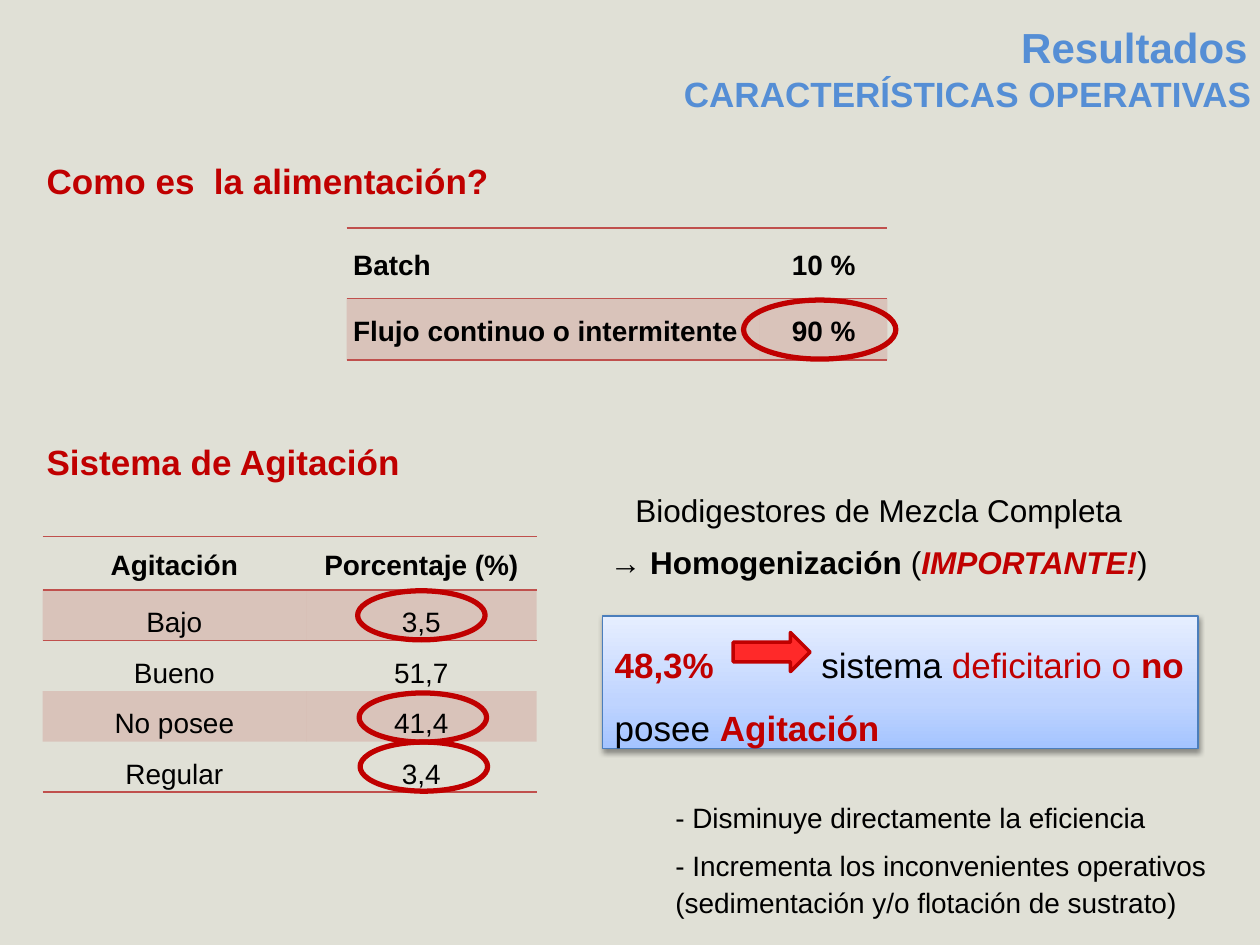
from copy import deepcopy

from lxml import etree
from pptx import Presentation
from pptx import util as u
from pptx.dml.color import RGBColor
from pptx.enum import shapes, text
from pptx.oxml import ns

Cm, Pt = u.Cm, u.Pt
COLORS = {"paper": "E0E0D6", "blue": "558ED5", "red": "C00000", "black": "000000",
          "rule": "C0504D", "arrow": "FF2929", "box_line": "4B7EBC",
          "box_low": "A4C4FF", "box_mid": "BFD4FF", "box_high": "E6EEFF"}
RGB = {name: RGBColor.from_string(value) for name, value in COLORS.items()}
LEFT, CENTER, RIGHT = text.PP_ALIGN.LEFT, text.PP_ALIGN.CENTER, text.PP_ALIGN.RIGHT
TOP, MIDDLE = text.MSO_ANCHOR.TOP, text.MSO_ANCHOR.MIDDLE


def write(frame, paragraphs, size, align=LEFT, spacing=1.0, after=0, anchor=TOP, inset=None):
    """Fill a text frame; each run is (text, colour, bold, italic)."""
    frame.word_wrap = True
    frame.auto_size = text.MSO_AUTO_SIZE.NONE
    frame.vertical_anchor = anchor
    if inset is not None:
        frame.margin_left = frame.margin_right = Cm(inset)
        frame.margin_top = frame.margin_bottom = 0
    for i, runs in enumerate(paragraphs):
        paragraph = frame.add_paragraph() if i else frame.paragraphs[0]
        paragraph.alignment = align
        paragraph.line_spacing = spacing
        paragraph.space_before, paragraph.space_after = Pt(0), Pt(after)
        for words, color, bold, italic in runs:
            run = paragraph.add_run()
            run.text = words
            run.font.name, run.font.size = "Arial", Pt(size)
            run.font.bold, run.font.italic = bold, italic
            run.font.color.rgb = RGB[color]


def add_child(parent, tag, **attributes):
    return etree.SubElement(parent, ns.qn(tag), **attributes)


prs = Presentation()
prs.slide_width, prs.slide_height = Cm(25.4), Cm(19.05)
slide = prs.slides.add_slide(prs.slide_layouts[1])
slide.background.fill.solid()
slide.background.fill.fore_color.rgb = RGB["paper"]

# Title and subtitle
title, effects = slide.placeholders
title.left, title.top, title.width, title.height = Cm(19.91), Cm(0.43), Cm(5.24), Cm(1.02)
write(title.text_frame, [[("Resultados", "blue", True, False)]], 24, RIGHT,
      anchor=MIDDLE, inset=0)
subtitle = slide.shapes.add_textbox(Cm(6.05), Cm(1.45), Cm(19.18), Cm(0.86))
write(subtitle.text_frame, [[("CARACTERÍSTICAS OPERATIVAS", "blue", True, False)]], 20, RIGHT,
      anchor=MIDDLE, inset=0)

# Section headings
for words, top in [("Como es  la alimentación?", 3.1), ("Sistema de Agitación", 8.76)]:
    heading = slide.shapes.add_textbox(Cm(0.69), Cm(top), Cm(10), Cm(1.12))
    write(heading.text_frame, [[(words, "red", True, False)]], 20)

# Tables: feeding and agitation; rules lists the (row, side) pairs that carry a line
feeding = dict(
    at=(6.99, 4.6), cols=(8.33, 2.57), rows=(1.42, 1.24), aligns=(LEFT, CENTER),
    data=[("Batch", "10 %"), ("Flujo continuo o intermitente", "90 %")],
    bold_rows=(0, 1), spacing=(1.15, 1.15), shaded=(1,),
    rules=[(0, "T"), (0, "B"), (1, "T"), (1, "B")])
agitation = dict(
    at=(0.86, 10.82), cols=(5.31, 4.65), rows=(1.07,) + (1.02,) * 4, aligns=(CENTER, CENTER),
    data=[("Agitación", "Porcentaje (%)"), ("Bajo", "3,5"), ("Bueno", "51,7"),
          ("No posee", "41,4"), ("Regular", "3,4")],
    bold_rows=(0,), spacing=(1.15,) + (1.5,) * 4, shaded=(1, 3),
    rules=[(0, "T"), (0, "B"), (1, "T"), (4, "B")])
for spec_of in (feeding, agitation):
    x, y = spec_of["at"]
    cols, rows = spec_of["cols"], spec_of["rows"]
    table = slide.shapes.add_table(len(rows), len(cols), Cm(x), Cm(y),
                                   Cm(sum(cols)), Cm(sum(rows))).table
    table.first_row = table.horz_banding = False
    # "No style, no grid"
    table._tbl.tblPr.find(ns.qn("a:tableStyleId")).text = "{2D5ABB26-0587-4C30-8999-92F81FD0307C}"
    for column, width in zip(table.columns, cols):
        column.width = Cm(width)
    for r, (height, values) in enumerate(zip(rows, spec_of["data"])):
        table.rows[r].height = Cm(height)
        for c, value in enumerate(values):
            cell = table.cell(r, c)
            cell.margin_left = cell.margin_right = Cm(0.13)
            cell.margin_top = cell.margin_bottom = 0
            cell.vertical_anchor = MIDDLE
            write(cell.text_frame, [[(value, "black", r in spec_of["bold_rows"], False)]], 16,
                  spec_of["aligns"][c], spec_of["spacing"][r])
            cell_pr = cell._tc.get_or_add_tcPr()
            for side in "TB":
                if (r, side) in spec_of["rules"]:
                    line = add_child(cell_pr, f"a:ln{side}", w=str(Pt(1)))
                    add_child(add_child(line, "a:solidFill"), "a:srgbClr", val=COLORS["rule"])
            if r in spec_of["shaded"]:
                tint = add_child(add_child(cell_pr, "a:solidFill"), "a:srgbClr",
                                 val=COLORS["rule"])
                add_child(tint, "a:alpha", val="20000")
            else:
                cell.fill.background()

# Rings around the key values
for x, y, width, height in [(14.99, 6.05, 3.07, 1.19), (7.21, 11.91, 2.57, 0.99),
                            (7.24, 13.97, 2.57, 0.99), (7.26, 14.96, 2.57, 0.99)]:
    ring = slide.shapes.add_shape(shapes.MSO_SHAPE.OVAL, Cm(x), Cm(y), Cm(width), Cm(height))
    ring.shadow.inherit = False
    ring.fill.background()
    ring.line.color.rgb, ring.line.width = RGB["red"], Pt(3)

# Why mixing matters
mixing = slide.shapes.add_textbox(Cm(11.96), Cm(9.7), Cm(11.51), Cm(2.16))
write(mixing.text_frame, [
    [("Biodigestores de Mezcla Completa", "black", False, False)],
    [("→ Homogenización ", "black", True, False), ("(", "black", False, False),
     ("IMPORTANTE!", "red", True, True), (")", "black", False, False)],
], 18, CENTER, 1.1, 6)

# Finding box with its arrow
finding = slide.shapes.add_group_shape()
box = finding.shapes.add_shape(shapes.MSO_SHAPE.RECTANGLE,
                               Cm(12.14), Cm(12.42), Cm(12.01), Cm(2.67))
box.fill.gradient()
box.fill.gradient_angle = 90
for stop, name in zip(box.fill.gradient_stops, ("box_low", "box_high")):
    stop.color.rgb = RGB[name]
stops = box._element.spPr.find(ns.qn("a:gradFill")).find(ns.qn("a:gsLst"))
stops.insert(1, deepcopy(stops[0]))
middle = box.fill.gradient_stops[1]
middle.position, middle.color.rgb = 0.35, RGB["box_mid"]
box.line.color.rgb, box.line.width = RGB["box_line"], Pt(0.75)
box.shadow.inherit = False
shadow = add_child(box._element.spPr.find(ns.qn("a:effectLst")), "a:outerShdw",
                   blurRad="40000", dist="20000", dir="5400000", rotWithShape="0")
add_child(add_child(shadow, "a:srgbClr", val=COLORS["black"]), "a:alpha", val="38000")
tabs = add_child(box.text_frame.paragraphs[0]._p.get_or_add_pPr(), "a:tabLst")
add_child(tabs, "a:tab", pos=str(Cm(4.17)), algn="l")
write(box.text_frame, [[
    ("48,3%\t", "red", True, False), ("sistema ", "black", False, False),
    ("deficitario o ", "red", False, False), ("no ", "red", True, False),
    ("posee ", "black", False, False), ("Agitación", "red", True, False),
]], 20, spacing=1.5, after=6)
arrow = finding.shapes.add_shape(shapes.MSO_SHAPE.RIGHT_ARROW,
                                 Cm(14.78), Cm(12.75), Cm(1.55), Cm(0.79))
arrow.shadow.inherit = False
arrow.fill.solid()
arrow.fill.fore_color.rgb = RGB["arrow"]
arrow.line.color.rgb, arrow.line.width = RGB["red"], Pt(2)

# Effects of poor mixing
effects.left, effects.top, effects.width, effects.height = (
    Cm(13.36), Cm(15.95), Cm(11.56), Cm(2.72))
write(effects.text_frame, [
    [("- Disminuye directamente la eficiencia", "black", False, False)],
    [("- Incrementa los inconvenientes operativos (sedimentación y/o flotación de sustrato)",
      "black", False, False)],
], 16, spacing=1.1, after=6)
for paragraph in effects.text_frame.paragraphs:
    paragraph_pr = paragraph._p.get_or_add_pPr()
    paragraph_pr.set("marL", "0")
    paragraph_pr.set("indent", "0")
    add_child(paragraph_pr, "a:buNone")

prs.save("out.pptx")
